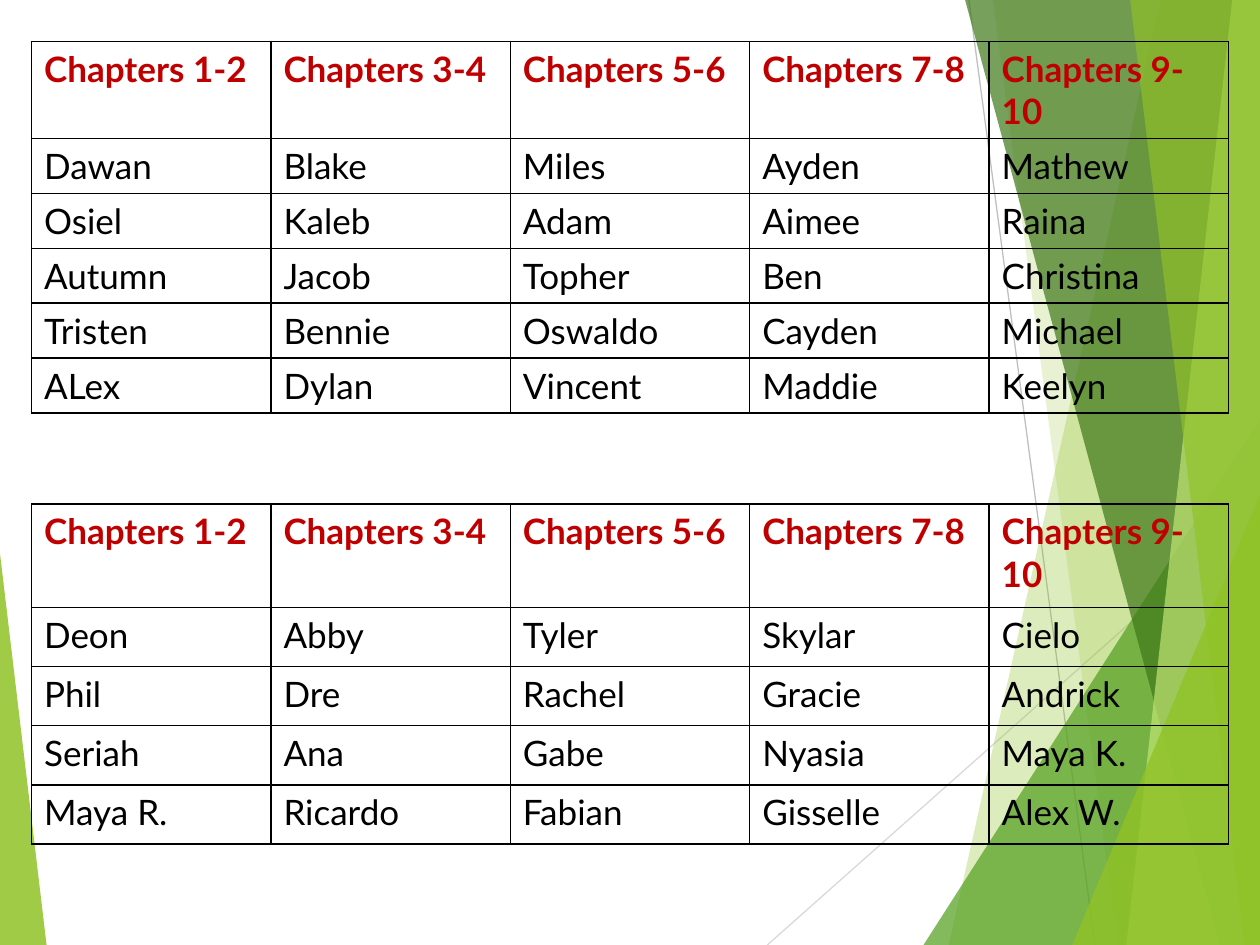
from pptx import Presentation
from pptx.dml.color import RGBColor
from pptx.enum.shapes import MSO_CONNECTOR, MSO_SHAPE
from pptx.oxml import parse_xml
from pptx.oxml.ns import nsdecls
from pptx.oxml.xmlchemy import OxmlElement
from pptx.util import Inches, Pt

THEME = {
    "font": "Lato", "size": Pt(20), "header": "C00000", "name": "000000",
    "border": "000000", "border_width": Pt(1), "hairline": Pt(0.75),
    "lime": "90C226", "pale": "C0E474", "green": "54A021", "forest": "3F7819",
}
COLUMNS = 5
WIDTH, HEIGHT = Inches(10), Inches(7.5)
MARGIN = WIDTH * 0.025

prs = Presentation()
prs.slide_width, prs.slide_height = WIDTH, HEIGHT
slide = prs.slides.add_slide(prs.slide_layouts[6])
shapes = slide.shapes


def tint(panel, color, opacity):
    """Give a panel a see-through fill, no outline and no shadow."""
    panel.shadow.inherit = False
    panel.line.fill.background()
    panel.fill.solid()
    panel.fill.fore_color.rgb = RGBColor.from_string(THEME[color])
    alpha = OxmlElement("a:alpha")
    alpha.set("val", str(opacity * 1000))
    panel.fill._xPr.find(".//{*}srgbClr").append(alpha)


def format_cell(cell, text, is_header):
    cell.text = text
    cell.fill.background()
    font = cell.text_frame.paragraphs[0].runs[0].font
    for attribute, value in {"name": THEME["font"], "size": THEME["size"],
                             "bold": is_header}.items():
        setattr(font, attribute, value)
    font.color.rgb = RGBColor.from_string(THEME["header" if is_header else "name"])
    properties = cell._tc.get_or_add_tcPr()
    for position, side in enumerate(("lnL", "lnR", "lnT", "lnB")):
        properties.insert(position, parse_xml(
            f'<a:{side} {nsdecls("a")} w="{THEME["border_width"]}"><a:solidFill>'
            f'<a:srgbClr val="{THEME["border"]}"/></a:solidFill></a:{side}>'))


# Thin lines crossing behind the panels
for x1, y1, x2, y2, color in ((7.69, 0, 8.69, 7.5, "BFBFBF"),
                              (10, 4.03, 6.09, 7.5, "D9D9D9")):
    hairline = shapes.add_connector(MSO_CONNECTOR.STRAIGHT,
                                    *map(Inches, (x1, y1, x2, y2)))
    hairline.line.color.rgb = RGBColor.from_string(color)
    hairline.line.width = THEME["hairline"]
    hairline._element.spPr.append(OxmlElement("a:effectLst"))

# Bands reach the right edge: x at the top, x at the bottom.
# Triangles stand on the bottom edge: left, width, height, apex.
panels = (
    ("band", (9.21, 7.53), "lime", 30),
    ("band", (7.88, 8.87), "lime", 20),
    ("triangle", (7.33, 2.67, 4.17, 1), "green", 72),
    ("band", (7.66, 9.68), "forest", 70),
    ("band", (9.78, 8.94), "pale", 70),
    ("band", (8.97, 9.88), "lime", 65),
    ("triangle", (8.51, 1.49, 3.57, 1), "lime", 80),
    ("triangle", (0, 0.37, 3.11, 0), "lime", 85),
)
for kind, geometry, color, opacity in panels:
    if kind == "band":
        top_x, bottom_x = map(Inches, geometry)
        outline = shapes.build_freeform(top_x, 0)
        outline.add_line_segments([(WIDTH, 0), (WIDTH, HEIGHT), (bottom_x, HEIGHT)])
        panel = outline.convert_to_shape()
    else:
        left, width, height = map(Inches, geometry[:3])
        panel = shapes.add_shape(MSO_SHAPE.ISOSCELES_TRIANGLE,
                                 left, HEIGHT - height, width, height)
        panel.adjustments[0] = geometry[3]
    tint(panel, color, opacity)

chapters = [f"Chapters {first}-{first + 1}" for first in range(1, 2 * COLUMNS, 2)]
first_class = [
    ["Dawan", "Blake", "Miles", "Ayden", "Mathew"],
    ["Osiel", "Kaleb", "Adam", "Aimee", "Raina"],
    ["Autumn", "Jacob", "Topher", "Ben", "Christina"],
    ["Tristen", "Bennie", "Oswaldo", "Cayden", "Michael"],
    ["ALex", "Dylan", "Vincent", "Maddie", "Keelyn"],
]
second_class = [
    ["Deon", "Abby", "Tyler", "Skylar", "Cielo"],
    ["Phil", "Dre", "Rachel", "Gracie", "Andrick"],
    ["Seriah", "Ana", "Gabe", "Nyasia", "Maya K."],
    ["Maya R.", "Ricardo", "Fabian", "Gisselle", "Alex W."],
]
# Students, then top, total height, header row and name row in inches
for students, top, total, header_row, name_row in (
        (first_class, 0.33, 2.93, 0.39, 0.41),
        (second_class, 4, 2.68, 0.82, 0.47)):
    rows = [chapters] + students
    frame = shapes.add_table(len(rows), COLUMNS, int(MARGIN), Inches(top),
                             int(WIDTH - 2 * MARGIN), Inches(total))
    roster = frame.table
    roster.first_row = roster.horz_banding = False
    for r, texts in enumerate(rows):
        roster.rows[r].height = Inches(name_row if r else header_row)
        for c, text in enumerate(texts):
            format_cell(roster.cell(r, c), text, r == 0)
    frame.height = Inches(total)

prs.save("out.pptx")
